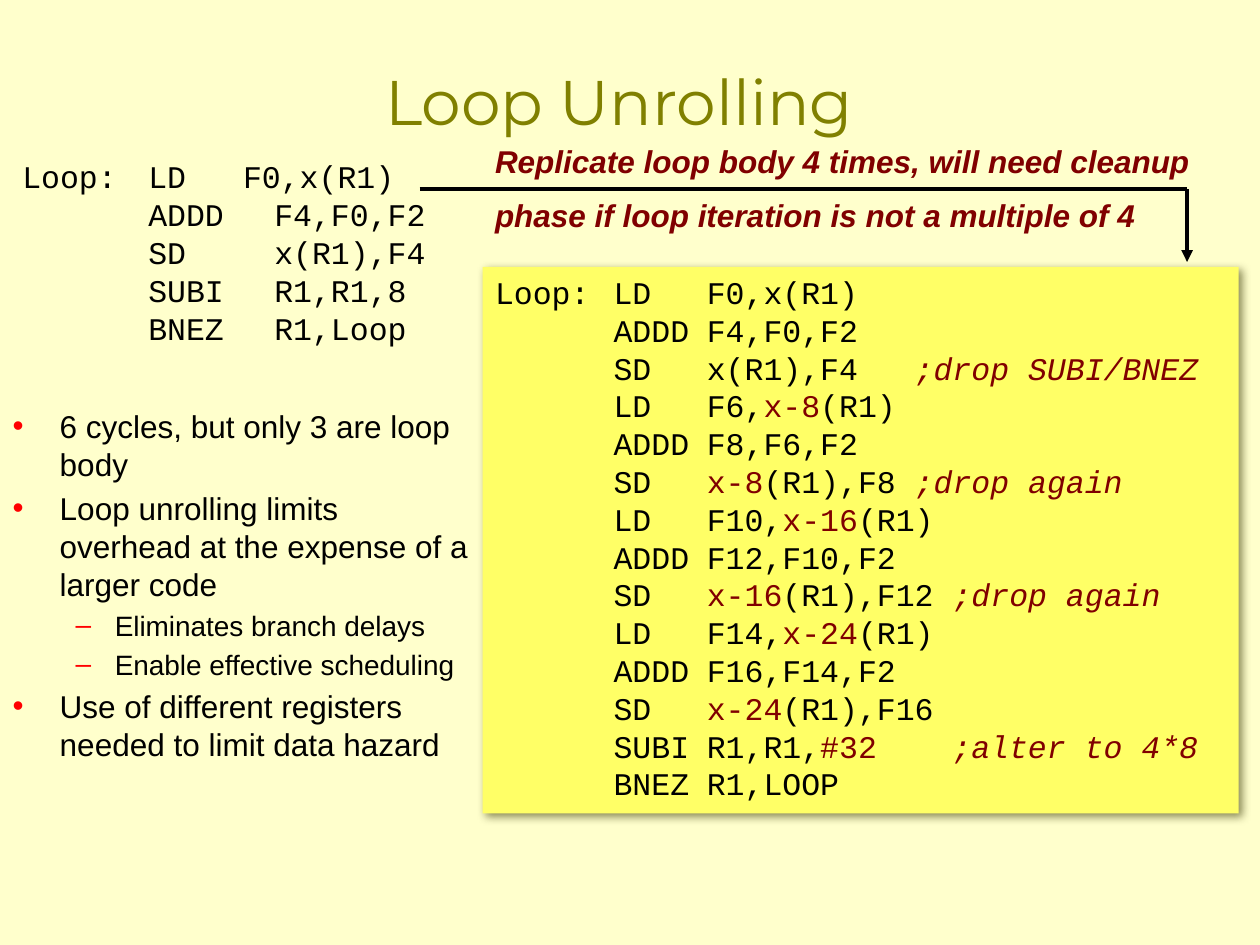
from lxml.etree import SubElement
from pptx import Presentation
from pptx.dml.color import RGBColor
from pptx.enum.shapes import MSO_CONNECTOR, MSO_SHAPE
from pptx.enum.text import MSO_ANCHOR, MSO_AUTO_SIZE, PP_ALIGN
from pptx.oxml.ns import qn
from pptx.util import Cm, Pt

BLACK, RED, DARK = "000000", "FF0000", "800000"
SANS, MONO = "Arial", "Courier New"

# |marked| parts are highlighted; a marked part that starts with ; is a comment
SHORT = """Loop:\tLD\tF0,x(R1)
\tADDD\tF4,F0,F2
\tSD\tx(R1),F4
\tSUBI\tR1,R1,8
\tBNEZ\tR1,Loop""".split("\n")
LONG = """Loop:\tLD\tF0,x(R1)
\tADDD\tF4,F0,F2
\tSD\tx(R1),F4\t|;drop SUBI/BNEZ|
\tLD\tF6,|x-8|(R1)
\tADDD\tF8,F6,F2
\tSD\t|x-8|(R1),F8 |;drop again|
\tLD\tF10,|x-16|(R1)
\tADDD\tF12,F10,F2
\tSD\t|x-16|(R1),F12 |;drop again|
\tLD\tF14,|x-24|(R1)
\tADDD\tF16,F14,F2
\tSD\t|x-24|(R1),F16
\tSUBI\tR1,R1,|#32|\t|;alter to 4*8|
\tBNEZ\tR1,LOOP""".split("\n")
NOTE = ["Replicate loop body 4 times, will need cleanup",
        "phase if loop iteration is not a multiple of 4"]
POINTS = [(0, "6 cycles, but only 3 are loop body"),
          (0, "Loop unrolling limits overhead at the expense of a larger code"),
          (1, "Eliminates branch delays"),
          (1, "Enable effective scheduling"),
          (0, "Use of different registers needed to limit data hazard")]
# per level: size, left margin, hanging indent, bullet
LEVELS = [(18, 0.95, 0.95, "•"), (16, 2.06, 0.79, "–")]


def rgb(code):
    return RGBColor.from_string(code)


def add(parent, tag, **attrs):
    return SubElement(parent, qn(tag), {k: str(v) for k, v in attrs.items()})


def write(par, text, size=18, font=SANS, color=BLACK, bold=False, italic=False):
    run = par.add_run()
    run.text = text
    face = run.font
    face.size, face.name, face.bold, face.italic = Pt(size), font, bold, italic
    face.color.rgb = rgb(color)


def start(frame, first, size=18, gap=0):
    """Open the next paragraph with a fixed line pitch and a gap above it."""
    par = frame.paragraphs[0] if first else frame.add_paragraph()
    par.line_spacing = Pt(1.2 * size)
    par.space_before = Pt(0 if first else gap * size)
    return par


class Page:
    def __init__(self, deck, back):
        self.slide = deck.slides.add_slide(deck.slide_layouts[1])
        self.shapes = self.slide.shapes
        fill = self.slide.background.fill
        fill.solid()
        fill.fore_color.rgb = rgb(back)

    def place(self, shape, box):
        shape.left, shape.top, shape.width, shape.height = map(Cm, box)
        frame = shape.text_frame
        frame.word_wrap = True
        frame.auto_size = MSO_AUTO_SIZE.NONE
        return frame

    def title(self, text, box):
        frame = self.place(self.shapes.title, box)
        frame.vertical_anchor = MSO_ANCHOR.MIDDLE
        par = frame.paragraphs[0]
        par.alignment = PP_ALIGN.CENTER
        write(par, text, size=36, font="Montserrat", color="808000")

    def points(self, items, box):
        frame = self.place(self.slide.placeholders[1], box)
        for i, (level, text) in enumerate(items):
            size, left, hang, mark = LEVELS[level]
            par = start(frame, i == 0, size, 0.2)
            par.level = level
            props = par._p.get_or_add_pPr()
            props.set("marL", str(Cm(left)))
            props.set("indent", str(-Cm(hang)))
            add(add(props, "a:buClr"), "a:srgbClr", val=RED)
            add(props, "a:buChar", char=mark)
            write(par, text, size)

    def panel(self, box, color):
        """Add a filled rectangle with a soft shadow."""
        shape = self.shapes.add_shape(MSO_SHAPE.RECTANGLE, *map(Cm, box))
        shape.shadow.inherit = False
        shape.fill.solid()
        shape.fill.fore_color.rgb = rgb(color)
        shape.line.fill.background()
        glow = add(shape._element.spPr.find(qn("a:effectLst")), "a:outerShdw",
                   blurRad=Pt(5), dist=Pt(3), dir=45 * 60000, rotWithShape=0)
        add(add(glow, "a:srgbClr", val="666633"), "a:alpha", val=75000)
        return shape

    def label(self, box):
        return self.shapes.add_textbox(*map(Cm, box))

    def code(self, shape, box, lines, stops):
        """Fill a shape with code; stops gives the tab stops of a line number."""
        frame = self.place(shape, box)
        frame.vertical_anchor = MSO_ANCHOR.TOP
        for i, line in enumerate(lines):
            par = start(frame, i == 0)
            par.alignment = PP_ALIGN.LEFT
            tabs = add(par._p.get_or_add_pPr(), "a:tabLst")
            for stop in stops(i):
                add(tabs, "a:tab", pos=Cm(stop), algn="l")
            for j, part in enumerate(line.split("|")):
                if part:
                    write(par, part, font=MONO, color=DARK if j % 2 else BLACK,
                          italic=part.startswith(";"))

    def note(self, lines, box):
        frame = self.place(self.label(box), box)
        for i, line in enumerate(lines):
            write(start(frame, i == 0, gap=0.5), line,
                  color=DARK, bold=True, italic=True)

    def line(self, *ends, arrow=False):
        link = self.shapes.add_connector(MSO_CONNECTOR.STRAIGHT, *map(Cm, ends))
        link.line.width = Pt(2.25)
        link.line.color.rgb = rgb(BLACK)
        if arrow:
            add(link.line._get_or_add_ln(), "a:tailEnd", type="triangle")
        add(link._element.spPr, "a:effectLst")


def main():
    deck = Presentation()
    deck.slide_width, deck.slide_height = Cm(25.4), Cm(19.05)
    page = Page(deck, "FFFFCC")
    page.title("Loop Unrolling", (1.47, 0.43, 22.02, 3.18))
    page.points(POINTS, (0, 8.08, 9.73, 10.59))

    box = (9.73, 5.38, 15.24, 11.02)
    last = len(LONG) - 2
    page.code(page.panel(box, "FFFF66"), box, LONG,
              lambda i: (2.39, 4.27, 9.22 if i == last else 8.46))
    box = (0.2, 3.05, 9.1, 4.88)
    page.code(page.label(box), box, SHORT,
              lambda i: (2.54, 5.08 if i else 4.45))

    turn, level = 23.93, 3.81
    page.line(8.46, level, turn, level)
    page.line(turn, level, turn, 5.28, arrow=True)
    page.note(NOTE, (9.73, 2.74, 15.04, 2.16))
    deck.save("out.pptx")


if __name__ == "__main__":
    main()
